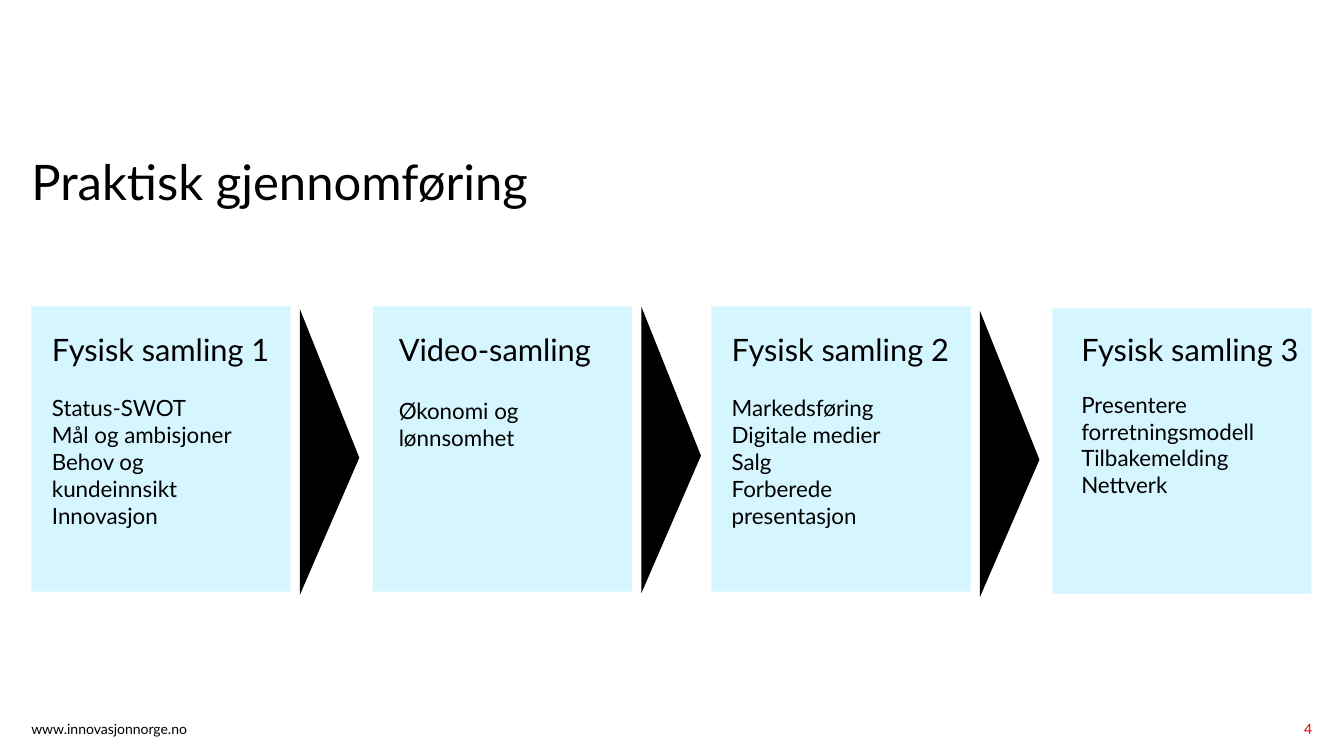
from dataclasses import dataclass

from pptx import Presentation
from pptx.dml.color import RGBColor
from pptx.enum.shapes import MSO_SHAPE
from pptx.enum.text import MSO_ANCHOR, PP_ALIGN
from pptx.util import Cm, Pt

RECTANGLE = MSO_SHAPE.RECTANGLE
TRIANGLE = MSO_SHAPE.ISOSCELES_TRIANGLE
TOP = MSO_ANCHOR.TOP
LEFT, RIGHT = PP_ALIGN.LEFT, PP_ALIGN.RIGHT


@dataclass(frozen=True)
class Theme:
    font: str = "Lato"
    ink: RGBColor = RGBColor(0x00, 0x00, 0x00)
    accent: RGBColor = RGBColor(0xED, 0x00, 0x00)
    card: RGBColor = RGBColor(0xD6, 0xF6, 0xFF)
    title: float = 35
    heading: float = 22
    body: float = 16
    footer: float = 10


theme = Theme()

deck = Presentation()
deck.slide_width, deck.slide_height = Cm(33.87), Cm(19.05)
slide = deck.slides.add_slide(deck.slide_layouts[6])


def add_block(kind, left, top, width, height, color):
    block = slide.shapes.add_shape(kind, Cm(left), Cm(top), Cm(width), Cm(height))
    block.shadow.inherit = False
    block.fill.solid()
    block.fill.fore_color.rgb = color
    block.line.fill.background()
    return block


def add_text(lines, left, top, width, height, sizes, color=theme.ink, align=LEFT, inset=0):
    frame = slide.shapes.add_textbox(Cm(left), Cm(top), Cm(width), Cm(height)).text_frame
    frame.word_wrap = True
    frame.vertical_anchor = TOP
    frame.margin_left = frame.margin_right = Cm(inset)
    frame.margin_top = frame.margin_bottom = Cm(inset / 2)
    frame.text = "\n".join(lines)
    for paragraph, size in zip(frame.paragraphs, sizes):
        paragraph.alignment = align
        for run in paragraph.runs:
            run.font.name = theme.font
            run.font.size = Pt(size)
            run.font.color.rgb = color
    return frame.paragraphs


card_width, card_height = 6.53, 7.19
arrow_length, arrow_depth = 7.21, 1.5
arrow_offset = 3.91

sessions = [
    (0.79, 7.72, 10.64, 1.06, 5.99, 4.7, 19.2, "Fysisk samling 1",
     ["Status-SWOT", "Mål og ambisjoner", "Behov og kundeinnsikt", "Innovasjon"]),
    (9.4, 7.72, 10.59, 9.8, 6.05, 3.33, 21.6, "Video-samling",
     ["Økonomi og lønnsomhet"]),
    (17.93, 7.72, 10.69, 18.19, 5.99, 4.62, 19.2, "Fysisk samling 2",
     ["Markedsføring", "Digitale medier", "Salg", "Forberede presentasjon"]),
    (26.52, 7.77, None, 27, 6.07, 4.52, 16.8, "Fysisk samling 3",
     ["Presentere forretningsmodell", "Tilbakemelding", "Nettverk"]),
]

title = add_text(["Praktisk gjennomføring"], 0.79, 3.99, 14.5, 3.58, [theme.title])
title[0].line_spacing = 0.9

for left, top, arrow_top, text_left, text_width, text_height, gap, heading, topics in sessions:
    add_block(RECTANGLE, left, top, card_width, card_height, theme.card)
    if arrow_top is not None:
        arrow = add_block(TRIANGLE, left + arrow_offset, arrow_top,
                          arrow_length, arrow_depth, theme.ink)
        arrow.rotation = 90
        arrow.adjustments[0] = 0.52
    sizes = [theme.heading] + [theme.body] * len(topics)
    agenda = add_text([heading] + topics, text_left, 8.2, text_width, text_height,
                      sizes, inset=0.25)
    agenda[1].space_before = Pt(gap)

add_text(["www.innovasjonnorge.no"], 0.79, 18.16, 7.24, 0.48, [theme.footer])
add_text(["4"], 30.33, 18.16, 2.74, 0.61, [theme.footer], theme.accent, RIGHT)

deck.save("out.pptx")
